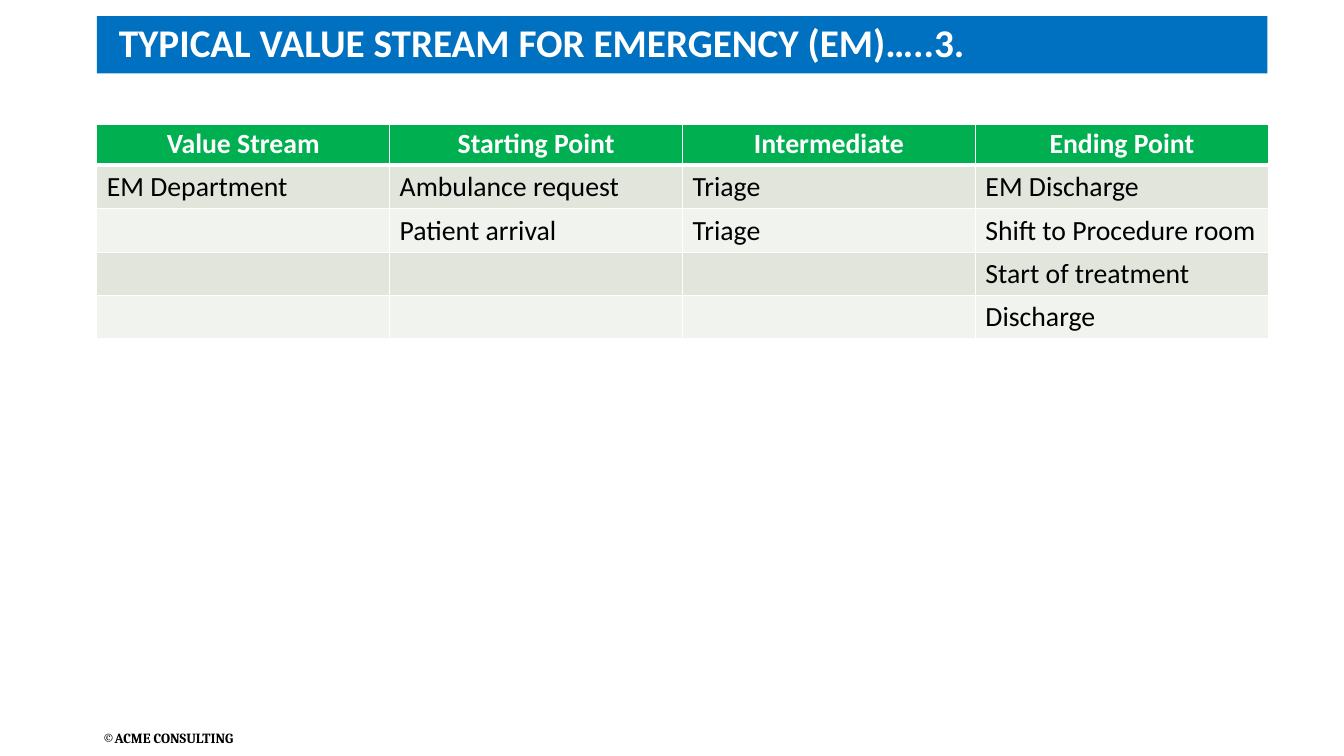
from lxml import etree
from pptx import Presentation
from pptx import util as u
from pptx.dml.color import RGBColor
from pptx.enum import shapes, text
from pptx.oxml import ns

WHITE = RGBColor(0xFF, 0xFF, 0xFF)
BLACK = RGBColor(0, 0, 0)
BLUE = RGBColor(0x00, 0x70, 0xC0)
GREEN = RGBColor(0x00, 0xB0, 0x50)
BANDS = RGBColor(0xE1, 0xE5, 0xDC), RGBColor(0xF0, 0xF3, 0xEE)

ROWS = [
    ["Value Stream", "Starting Point", "Intermediate", "Ending Point"],
    ["EM Department", "Ambulance request", "Triage", "EM Discharge"],
    ["", "Patient arrival", "Triage", "Shift to Procedure room"],
    ["", "", "", "Start of treatment"],
    ["", "", "", "Discharge"],
]


def add(parent, tag, **attrs):
    return etree.SubElement(parent, ns.qn(tag), attrs)


def write(frame, words, size, color=BLACK, bold=False, font="Calibri",
          align=None, bullet=None):
    para = frame.paragraphs[0]
    if bullet:
        props = para._p.get_or_add_pPr()
        add(props, "a:buFont", typeface=font)
        add(props, "a:buChar", char=bullet)
    para.alignment = align
    style = para.font
    if words:
        run = para.add_run()
        run.text = words
        style = run.font
    style.size = u.Pt(size)
    style.name = font
    style.bold = bold
    style.color.rgb = color


def label(slide, box, words, size, wrap=True, **form):
    frame = slide.shapes.add_textbox(*map(u.Inches, box)).text_frame
    frame.word_wrap = wrap
    write(frame, words, size, **form)


def banner(slide, box, color):
    bar = slide.shapes.add_shape(shapes.MSO_SHAPE.RECTANGLE,
                                 *map(u.Inches, box))
    bar.shadow.inherit = False
    bar.fill.solid()
    bar.fill.fore_color.rgb = color
    bar.line.fill.background()


def border(cell, foot):
    props = cell._tc.get_or_add_tcPr()
    for side, width in zip("LRTB", (1, 1, 1, foot)):
        line = add(props, "a:ln" + side, w=str(u.Pt(width)))
        add(add(line, "a:solidFill"), "a:srgbClr", val=str(WHITE))


def grid(slide, left, top, width, rows):
    heights = [0.41] + [0.43] * (len(rows) - 1)
    table = slide.shapes.add_table(
        len(rows), len(rows[0]), u.Inches(left), u.Inches(top),
        u.Inches(width), u.Inches(sum(heights))).table
    table.first_row = table.horz_banding = False
    for r, row in enumerate(rows):
        head = r == 0
        table.rows[r].height = u.Inches(heights[r])
        for c, words in enumerate(row):
            cell = table.cell(r, c)
            border(cell, 3 if head else 1)
            cell.fill.solid()
            cell.fill.fore_color.rgb = GREEN if head else BANDS[(r - 1) % 2]
            if head:
                cell.margin_top = cell.margin_bottom = u.Inches(0.03)
            write(cell.text_frame, words, 19.8, bold=head,
                  color=WHITE if head else BLACK,
                  align=text.PP_ALIGN.CENTER if head else None)


def main():
    deck = Presentation()
    deck.slide_width, deck.slide_height = u.Inches(13.33), u.Inches(7.5)
    slide = deck.slides.add_slide(deck.slide_layouts[6])

    # Footer
    label(slide, (0.92, 7.19, 2.05, 0.27), "ACME CONSULTING", 10,
          bold=True, font="Cambria", bullet="©")

    # Title bar
    banner(slide, (0.96, 0.16, 11.61, 0.57), BLUE)
    label(slide, (1.08, 0.13, 8.69, 0.57),
          "TYPICAL VALUE STREAM FOR EMERGENCY (EM)…..3.", 28,
          wrap=False, color=WHITE, bold=True)

    # Value stream table
    grid(slide, 0.96, 1.23, 11.62, ROWS)

    deck.save("out.pptx")


if __name__ == "__main__":
    main()
